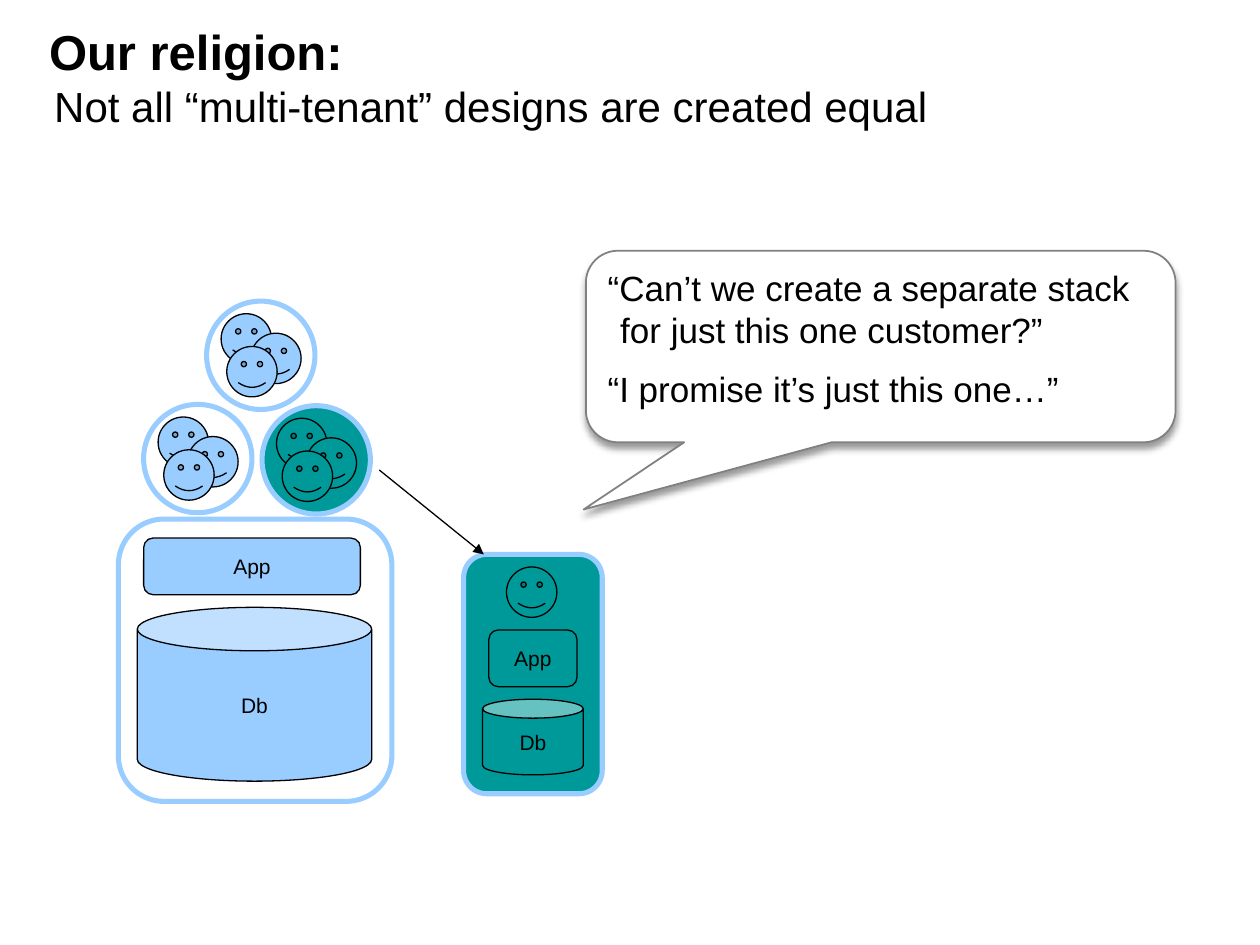
from lxml import etree
from pptx import Presentation
from pptx.dml.color import RGBColor
from pptx.enum.shapes import MSO_CONNECTOR, MSO_SHAPE
from pptx.enum.text import MSO_ANCHOR, MSO_AUTO_SIZE, PP_ALIGN
from pptx.oxml.ns import qn
from pptx.util import Inches, Pt

ROUND = MSO_SHAPE.ROUNDED_RECTANGLE
OVAL = MSO_SHAPE.OVAL
SMILE = MSO_SHAPE.SMILEY_FACE
CAN = MSO_SHAPE.CAN
BUBBLE = MSO_SHAPE.ROUNDED_RECTANGULAR_CALLOUT
STRAIGHT = MSO_CONNECTOR.STRAIGHT
MIDDLE, TOP = MSO_ANCHOR.MIDDLE, MSO_ANCHOR.TOP
LEFT, CENTER = PP_ALIGN.LEFT, PP_ALIGN.CENTER
NO_FIT = MSO_AUTO_SIZE.NONE

COLS, ROWS = 100, 75
WIDTH, HEIGHT = Inches(10), Inches(7.5)
BLUE, TEAL, WHITE, BLACK, GRAY = "99CCFF", "009999", "FFFFFF", "000000", "808080"
FACES = [(1.15, 1), (3.5, 2.55), (1.6, 3.6)]
RINGS = [(11.4, 32.1, WHITE, BLUE), (20.8, 32.2, TEAL, TEAL), (16.4, 23.9, WHITE, BLUE)]


def color(code):
    return RGBColor.from_string(code)


def grid(x, y):
    return round(WIDTH * x / COLS), round(HEIGHT * y / ROWS)


def set_font(para, size):
    para.font.name = "Arial"
    para.font.size = Pt(size)
    para.font.color.rgb = color(BLACK)


def hang(para, inches):
    props = para._p.get_or_add_pPr()
    props.set("marL", str(Inches(inches)))
    props.set("indent", str(-Inches(inches)))


def add_form(parent, kind, box, fill, line=BLACK, width=0.75, adjust=()):
    form = parent.add_shape(kind, *grid(*box[:2]), *grid(*box[2:]))
    form.shadow.inherit = False
    form.fill.solid()
    form.fill.fore_color.rgb = color(fill)
    form.line.color.rgb = color(line)
    form.line.width = Pt(width)
    for i, value in enumerate(adjust):
        form.adjustments[i] = value
    return form


def add_label(parent, kind, box, fill, text):
    frame = add_form(parent, kind, box, fill).text_frame
    frame.word_wrap = False
    frame.vertical_anchor = MIDDLE
    para = frame.paragraphs[0]
    para.text = text
    para.alignment = CENTER
    set_font(para, 12)


def add_face(parent, x, y, fill):
    add_form(parent, SMILE, (x, y, 4, 4), fill)


def add_ring(shapes, x, y, back, face):
    group = shapes.add_group_shape().shapes
    add_form(group, OVAL, (x, y, 8.6, 8.6), back, BLUE, 2.89)
    for dx, dy in FACES:
        add_face(group, x + dx, y + dy, face)


def add_stack(shapes):
    add_form(shapes, ROUND, (9.4, 41.2, 21.7, 22.4), WHITE, BLUE, 2.89)
    add_label(shapes, ROUND, (11.4, 42.7, 17.2, 4.5), BLUE, "App")
    add_label(shapes, CAN, (10.9, 48.2, 18.6, 13.8), BLUE, "Db")


def add_single(shapes):
    group = shapes.add_group_shape().shapes
    add_form(group, ROUND, (36.8, 44, 11, 19), TEAL, BLUE, 2.89)
    add_face(group, 40.2, 45, TEAL)
    add_label(group, ROUND, (38.8, 50, 7, 4.5), TEAL, "App")
    add_label(group, CAN, (38.3, 55.5, 8, 6), TEAL, "Db")


def add_arrow(shapes, start, end):
    arrow = shapes.add_connector(STRAIGHT, *grid(*start), *grid(*end))
    arrow.line.color.rgb = color(BLACK)
    arrow.line.width = Pt(0.75)
    etree.SubElement(arrow.line._get_or_add_ln(), qn("a:tailEnd"), type="triangle")
    etree.SubElement(arrow._element.spPr, qn("a:effectLst"))


def add_shadow(form):
    effects = form._element.spPr.find(qn("a:effectLst"))
    shade = etree.SubElement(effects, qn("a:outerShdw"), blurRad=str(Pt(4)),
                             dist=str(Pt(3)), dir="5400000", rotWithShape="0")
    tint = etree.SubElement(shade, qn("a:srgbClr"), val=BLACK)
    etree.SubElement(tint, qn("a:alpha"), val="40000")


def add_quote(shapes, box, lines):
    form = add_form(shapes, BUBBLE, box, WHITE, GRAY, 1, (-0.504, 0.851, 0.167))
    add_shadow(form)
    frame = form.text_frame
    frame.word_wrap = True
    frame.vertical_anchor = TOP
    for i, text in enumerate(lines):
        para = frame.add_paragraph() if i else frame.paragraphs[0]
        para.text = text
        para.alignment = LEFT
        hang(para, 0.1)
        if i:
            para.space_before = Pt(10)
        set_font(para, 20)


def set_title(title, head, rest):
    title.left, title.top = grid(3.3, 1.7)
    title.width, title.height = grid(94.7, 8.7)
    frame = title.text_frame
    frame.auto_size = NO_FIT
    frame.word_wrap = True
    frame.vertical_anchor = MIDDLE
    frame.margin_left = frame.margin_top = frame.margin_bottom = Inches(0.06)
    para = frame.paragraphs[0]
    para.alignment = LEFT
    hang(para, 0.04)
    set_font(para, 24)
    lead = para.add_run()
    lead.text = head
    lead.font.size = Pt(28)
    lead.font.bold = True
    para.add_line_break()
    para.add_run().text = rest


def main():
    deck = Presentation()
    deck.slide_width, deck.slide_height = WIDTH, HEIGHT
    slide = deck.slides.add_slide(deck.slide_layouts[5])
    shapes = slide.shapes
    set_title(shapes.title, "Our religion:",
              "Not all “multi-tenant” designs are created equal")
    add_stack(shapes)
    for ring in RINGS:
        add_ring(shapes, *ring)
    add_single(shapes)
    add_arrow(shapes, (30.1, 37.3), (38.4, 44))
    add_quote(shapes, (46.5, 19.9, 46.8, 15.2), [
        "“Can’t we create a separate stack for just this one customer?”",
        "“I promise it’s just this one…”"])
    deck.save("out.pptx")


if __name__ == "__main__":
    main()
